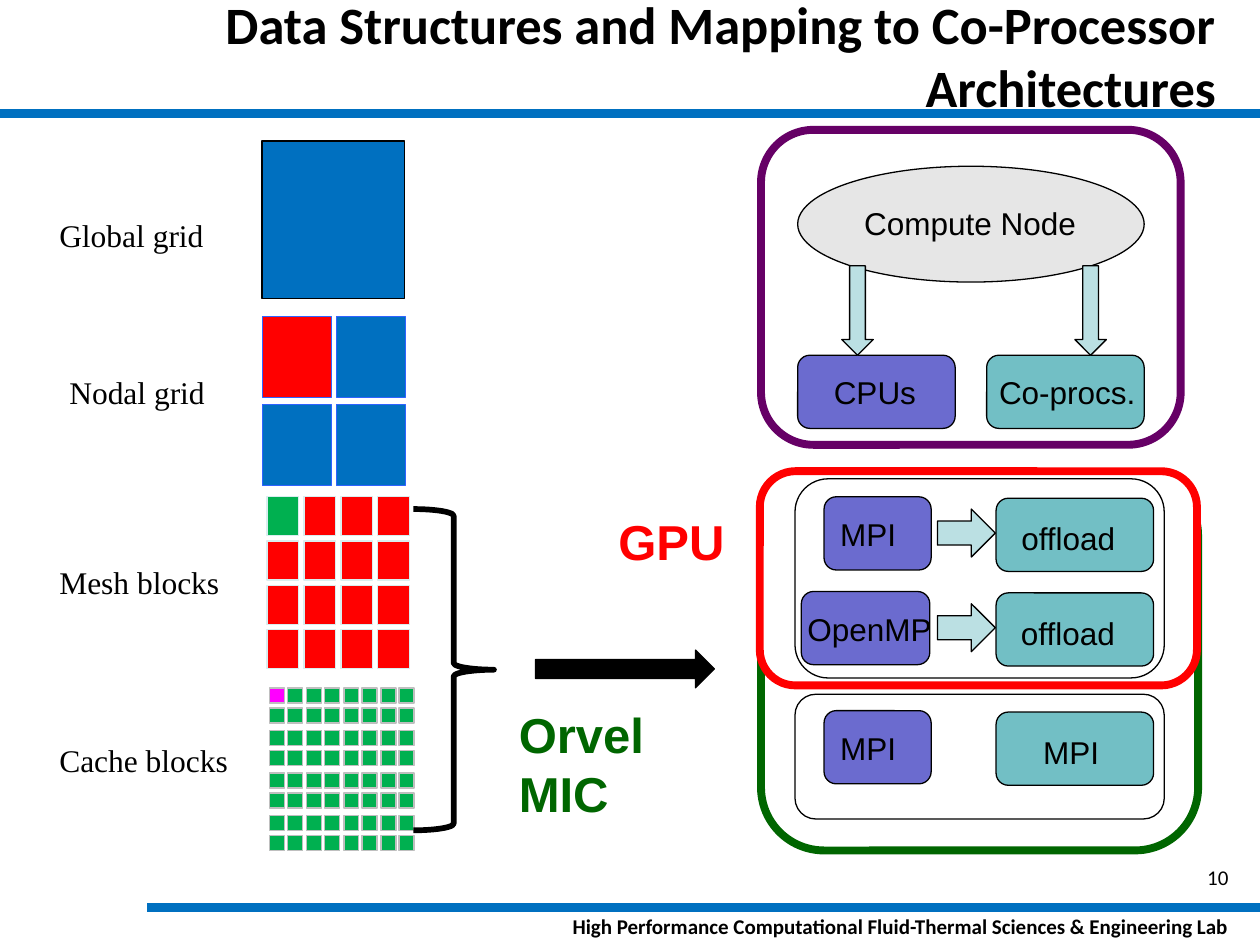
from pptx import Presentation
from pptx.dml.color import RGBColor
from pptx.enum.shapes import MSO_CONNECTOR, MSO_SHAPE
from pptx.enum.text import MSO_ANCHOR, MSO_AUTO_SIZE, PP_ALIGN
from pptx.oxml.ns import qn
from pptx.util import Pt
from lxml.etree import SubElement

BLUE, RED, GREEN, DARK_GREEN = "0070C0", "FF0000", "00B050", "006600"
CPU, COPROC, PALE = "6B6BCF", "72BFC5", "BBE0E3"

presentation = Presentation()
presentation.slide_width, presentation.slide_height = Pt(720), Pt(540)
slide = presentation.slides.add_slide(presentation.slide_layouts[5])
shapes = slide.shapes


def add_block(kind, left, top, width, height, fill=None, line="000000", weight=0.75):
    block = shapes.add_shape(kind, Pt(left), Pt(top), Pt(width), Pt(height))
    block.shadow.inherit = False
    if fill:
        block.fill.solid()
        block.fill.fore_color.rgb = RGBColor.from_string(fill)
    else:
        block.fill.background()
    block.line.color.rgb = RGBColor.from_string(line)
    block.line.width = Pt(weight)


def add_label(text, left, top, width, height, size=18, font="Arial", color="000000",
              bold=False, align=PP_ALIGN.LEFT, wrap=False, insets=(7.2, 3.6, 7.2, 3.6)):
    label = shapes.add_textbox(Pt(left), Pt(top), Pt(width), Pt(height))
    frame = label.text_frame
    frame.word_wrap = wrap
    frame.margin_left, frame.margin_top, frame.margin_right, frame.margin_bottom = map(Pt, insets)
    frame.text = text
    frame.paragraphs[0].alignment = align
    run_font = frame.paragraphs[0].runs[0].font
    run_font.name, run_font.size, run_font.bold = font, Pt(size), bold
    run_font.color.rgb = RGBColor.from_string(color)


# Title
title = shapes.title
title.left, title.top, title.width, title.height = Pt(12.2), Pt(2.9), Pt(690), Pt(57.6)
title.text_frame.text = "Data Structures and Mapping to Co-Processor Architectures"
title.text_frame.auto_size = MSO_AUTO_SIZE.NONE
title.text_frame.word_wrap = True
title.text_frame.vertical_anchor = MSO_ANCHOR.MIDDLE
heading = title.text_frame.paragraphs[0]
heading.alignment = PP_ALIGN.RIGHT
heading.runs[0].font.name = "Calibri"
heading.runs[0].font.size = Pt(30)
heading.runs[0].font.bold = True
heading.runs[0].font.color.rgb = RGBColor.from_string("000000")

# Rules, footer and page number
for start, y in ((0, 64.8), (84.2, 518.4)):
    rule = shapes.add_connector(MSO_CONNECTOR.STRAIGHT, Pt(start), Pt(y), Pt(720), Pt(y))
    rule.line.color.rgb = RGBColor.from_string(BLUE)
    rule.line.width = Pt(5)
    SubElement(rule.line._get_or_add_ln().getparent(), qn("a:effectLst"))
add_label("High Performance Computational Fluid-Thermal Sciences & Engineering Lab",
          315.4, 522, 386.6, 14.4, 12, "Calibri", bold=True, align=PP_ALIGN.RIGHT,
          wrap=True, insets=(0, 0, 0, 0))
add_label("10", 678.2, 490.3, 23.8, 25.2, 12, "Calibri", align=PP_ALIGN.RIGHT,
          wrap=True, insets=(7.2, 3.6, 0, 3.6))

# Outer frames: Co-processor models
add_block(MSO_SHAPE.ROUNDED_RECTANGLE, 434.9, 270, 249.8, 216, "FFFFFF", DARK_GREEN, 4.5)
add_block(MSO_SHAPE.ROUNDED_RECTANGLE, 434.2, 269.3, 249.8, 122.4, "FFFFFF", RED, 4.5)

# Compute node with its processors
add_block(MSO_SHAPE.OVAL, 455.8, 95, 198, 66.2, "E6E6E6")
add_label("Compute Node", 486.7, 113, 136.8, 28.8)
for name, left, fill, label_left, label_width, arrow_left in (
        ("CPUs", 455.8, CPU, 469.4, 61.9, 481),
        ("Co-procs.", 563.8, COPROC, 563.8, 93.6, 614.2)):
    add_block(MSO_SHAPE.ROUNDED_RECTANGLE, left, 203, 90, 41.8, fill)
    add_label(name, label_left, 209.5, label_width, 28.8)
    add_block(MSO_SHAPE.DOWN_ARROW, arrow_left, 151.9, 18, 51.1, PALE)
add_block(MSO_SHAPE.ROUNDED_RECTANGLE, 434.9, 74.2, 239.8, 180, None, "660066", 4.5)

# Programming models: host block, co-processor block, optional offload arrow
for top, host, host_box, host_label, task, task_label, offloads in (
        (283.9, "MPI", (470.9, 61.2), (473, 46.8), "offload", (576.5, 68.4), True),
        (338, "OpenMP", (457.9, 73.4), (454.3, 86.4), "offload", (576.3, 68.4), True),
        (406.1, "MPI", (470.9, 61.2), (473, 46.8), "MPI", (589, 46.8), False)):
    add_block(MSO_SHAPE.ROUNDED_RECTANGLE, host_box[0], top, host_box[1], 41.8, CPU)
    add_block(MSO_SHAPE.ROUNDED_RECTANGLE, 569.2, top + 0.8, 90, 41.8, COPROC)
    add_label(host, host_label[0], top + 7, host_label[1], 28.8)
    add_label(task, task_label[0], top + 9.2, task_label[1], 28.8)
    if offloads:
        add_block(MSO_SHAPE.RIGHT_ARROW, 535.7, top + 7, 33.1, 27.4, PALE)
for top, height in ((273.6, 113.8), (396.7, 71.3)):
    add_block(MSO_SHAPE.ROUNDED_RECTANGLE, 454.3, top, 211, height)

# Model names
add_label("GPU", 346.3, 288.7, 75.6, 41, 28, color=RED, bold=True)
add_label("Orvel MIC", 289.4, 398.9, 132.5, 41, 28, color=DARK_GREEN, bold=True)

# Grid hierarchy: the first cell of each level is the one refined below
add_block(MSO_SHAPE.RECTANGLE, 149.8, 80.6, 81.4, 90, BLUE)
for row in range(2):
    for col in range(2):
        add_block(MSO_SHAPE.RECTANGLE, 149.8 + 42.3 * col, 180.9 + 50.4 * row, 39.6, 46.1,
                  BLUE if row or col else RED, "2F63FF")
for row in range(4):
    for col in range(4):
        add_block(MSO_SHAPE.RECTANGLE, 152.6 + 21.1 * col, 283.7 + 25.4 * row, 18, 22.3,
                  RED if row or col else GREEN, "DAEDEF")
for row in range(8):
    for col in range(8):
        left = 154.1 + 21.2 * (col // 2) + 10.3 * (col % 2)
        top = 393.1 + 24.3 * (row // 2) + 11.5 * (row % 2)
        add_block(MSO_SHAPE.RECTANGLE, left, top, 8.6, 8.6,
                  GREEN if row or col else "FF00FF", "BFBFBF")

# Grid names
for name, left, top, width, height in (
        ("Global grid", 27.4, 120.2, 100.8, 26.6), ("Nodal grid", 33.1, 209.5, 92.9, 32.4),
        ("Mesh blocks", 27.4, 318.2, 119.5, 32.4), ("Cache blocks", 27.4, 419.8, 122.4, 23)):
    add_label(name, left, top, width, height, font="Times New Roman", wrap=True,
              insets=(6.5, 3.6, 6.5, 3.6))

# Brace and arrow from the blocks to the models
add_block(MSO_SHAPE.RIGHT_BRACE, 236.2, 290.9, 46.1, 183.6, weight=3.25)
add_block(MSO_SHAPE.RIGHT_ARROW, 306, 371.5, 102.2, 21.6, "000000")

presentation.save("out.pptx")
